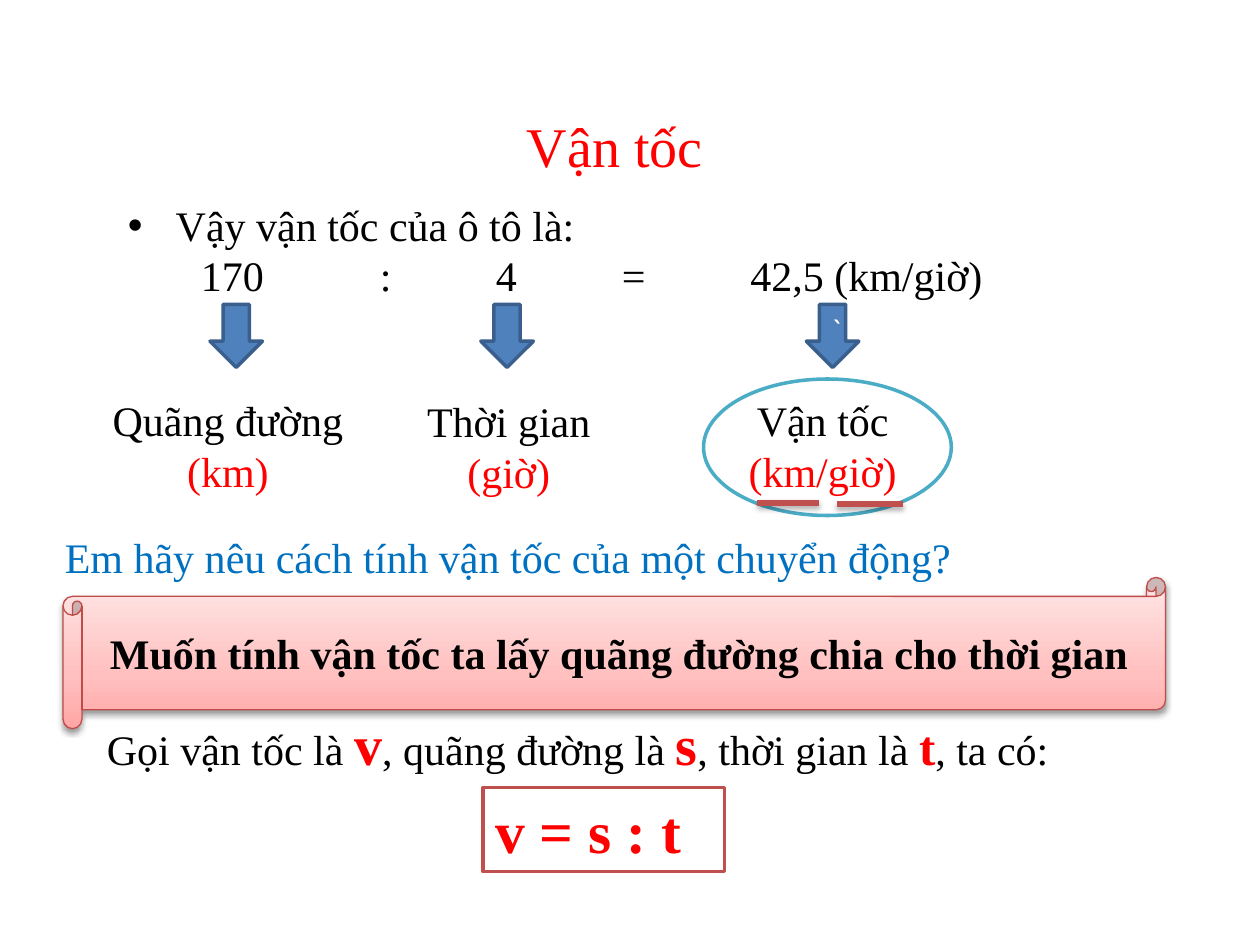
from copy import deepcopy

from pptx import Presentation
from pptx.dml.color import RGBColor
from pptx.enum.shapes import MSO_CONNECTOR, MSO_SHAPE
from pptx.enum.text import MSO_ANCHOR, PP_ALIGN
from pptx.oxml.ns import qn
from pptx.util import Inches, Pt
from lxml import etree

LEFT, CENTER = PP_ALIGN.LEFT, PP_ALIGN.CENTER
TOP, MIDDLE = MSO_ANCHOR.TOP, MSO_ANCHOR.MIDDLE
ARROW, SCROLL = MSO_SHAPE.DOWN_ARROW, MSO_SHAPE.HORIZONTAL_SCROLL
OVAL, RECT = MSO_SHAPE.OVAL, MSO_SHAPE.RECTANGLE
STRAIGHT = MSO_CONNECTOR.STRAIGHT

COLORS = {
    "black": "000000", "white": "FFFFFF", "red": "FF0000", "question": "0070C0",
    "arrow": "4F81BD", "arrow_line": "3A5F8C", "ring": "4BACC6",
    "accent": "C0504D", "scroll_line": "BF4C48",
}
SCROLL_STOPS = [(0, "FFA6A5"), (0.35, "FFC0BF"), (1, "FFE7E7")]
COLS, ROWS = 120, 90


def rgb(name):
    return RGBColor.from_string(COLORS[name])


class Slide:
    """Places elements on a grid of COLS by ROWS cells."""

    font = "Times New Roman"
    size = 24

    def __init__(self, prs):
        self.prs = prs
        self.s = prs.slides.add_slide(prs.slide_layouts[6])

    def grid(self, *values):
        units = (self.prs.slide_width / COLS, self.prs.slide_height / ROWS)
        return [round(v * units[i % 2]) for i, v in enumerate(values)]

    def add_lines(self, tf, lines, align=LEFT, anchor=TOP, wrap=True):
        """Each line is a list of runs: (text, color, size, bold, font)."""
        tf.word_wrap = wrap
        tf.vertical_anchor = anchor
        for i, runs in enumerate(lines):
            p = tf.paragraphs[0] if i == 0 else tf.add_paragraph()
            p.alignment = align
            for text, color, *style in runs:
                size, bold, font = style + [self.size, False, self.font][len(style):]
                r = p.add_run()
                r.text = text
                r.font.name, r.font.size, r.font.bold = font, Pt(size), bold
                r.font.color.rgb = rgb(color)

    def text(self, place, lines, **layout):
        tf = self.s.shapes.add_textbox(*self.grid(*place)).text_frame
        self.add_lines(tf, lines, **layout)
        return tf

    def shape(self, kind, place, line, width=2, fill=None, lines=(), **layout):
        sp = self.s.shapes.add_shape(kind, *self.grid(*place))
        sp.shadow.inherit = False
        if fill:
            sp.fill.solid()
            sp.fill.fore_color.rgb = rgb(fill)
        else:
            sp.fill.background()
        sp.line.color.rgb = rgb(line)
        sp.line.width = Pt(width)
        self.add_lines(sp.text_frame, lines, **layout)
        return sp

    def underline(self, x1, x2, y):
        c = self.s.shapes.add_connector(STRAIGHT, *self.grid(x1, y, x2, y))
        c.line.color.rgb = rgb("accent")
        c.line.width = Pt(3)
        etree.SubElement(c._element.spPr, qn("a:effectLst"))
        self.shadow(c, 35, 1.8)

    def shadow(self, sp, alpha, dist):
        effects = sp._element.spPr.find(qn("a:effectLst"))
        outer = etree.SubElement(effects, qn("a:outerShdw"), blurRad=str(Pt(3.1)),
                                 dist=str(Pt(dist)), dir="5400000", rotWithShape="0")
        color = etree.SubElement(outer, qn("a:srgbClr"), val=COLORS["black"])
        etree.SubElement(color, qn("a:alpha"), val=str(alpha * 1000))

    def gradient(self, sp, stops):
        sp.fill.gradient()
        sp.fill.gradient_angle = 90
        stop_list = sp._element.spPr.find(".//" + qn("a:gsLst"))
        stop_list.append(deepcopy(stop_list[0]))
        for stop, (position, color) in zip(sp.fill.gradient_stops, stops):
            stop.position = position
            stop.color.rgb = RGBColor.from_string(color)

    def bullet(self, p, indent):
        pPr = p._p.get_or_add_pPr()
        pPr.set("marL", str(Inches(indent)))
        pPr.set("indent", str(-Inches(indent)))
        etree.SubElement(pPr, qn("a:buFont"), typeface="Arial")
        etree.SubElement(pPr, qn("a:buChar"), char="•")

    def tabs(self, p, stops):
        tab_list = etree.SubElement(p._p.get_or_add_pPr(), qn("a:tabLst"))
        for stop in stops:
            etree.SubElement(tab_list, qn("a:tab"), pos=str(Inches(stop)), algn="l")


def main():
    prs = Presentation()
    prs.slide_width, prs.slide_height = Inches(10), Inches(7.5)
    slide = Slide(prs)

    # Title and worked example
    slide.text((49, 10, 19.3, 7.7), [[("Vận tốc", "red", 32)]], wrap=False)
    tf = slide.text((11, 18.4, 84.7, 10.9), [
        [("Vậy vận tốc của ô tô là:", "black")],
        [("\t170\t:\t4\t=\t42,5 (km/giờ)", "black")],
    ])
    slide.bullet(tf.paragraphs[0], 0.38)
    slide.tabs(tf.paragraphs[1], [0.58, 2, 2.92, 3.92, 4.94])

    # Quantities, each with an arrow above
    for name, unit, x, y, w, arrow_x, mark in [
        ("Quãng đường", "(km)", 9.4, 37, 24.6, 20, ""),
        ("Thời gian", "(giờ)", 39.4, 37.1, 18.1, 45.8, ""),
        ("Vận tốc", "(km/giờ)", 70, 37, 16.7, 76.8, "`"),
    ]:
        slide.text((x, y, w, 10.9), [[(name, "black")], [(unit, "red")]],
                   align=CENTER, wrap=False)
        lines = [[(mark, "white", 18, False, "Calibri")]] if mark else []
        slide.shape(ARROW, (arrow_x, 29, 5, 6), "arrow_line", fill="arrow",
                    lines=lines, align=CENTER, anchor=MIDDLE)

    # Rule on a scroll, with its question
    rule = "Muốn tính vận tốc ta lấy quãng đường chia cho thời gian"
    scroll = slide.shape(SCROLL, (6, 55, 105, 14.4), "scroll_line", 0.75,
                         lines=[[(rule, "black", 24, True)]],
                         align=CENTER, anchor=MIDDLE)
    slide.gradient(scroll, SCROLL_STOPS)
    slide.shadow(scroll, 38, 1.6)
    slide.text((5, 50, 96, 6),
               [[("Em hãy nêu cách tính vận tốc của một chuyển động?", "question")]])

    # Ring around the speed
    slide.shape(OVAL, (67, 36.1, 23.6, 13), "ring")

    # Symbols and formula
    slide.text((9, 67, 96, 7.7), [[
        ("Gọi vận tốc là ", "black"), ("v", "red", 32, True),
        (", quãng đường là ", "black"), ("s", "red", 32, True),
        (", thời gian là ", "black"), ("t", "red", 28, True),
        (", ta có:", "black"),
    ]])
    slide.shape(RECT, (46, 75, 23, 8), "accent", fill="white",
                lines=[[("v = s : t", "red", 34, True)]])

    # Underlined units
    slide.underline(72.1, 78, 47.9)
    slide.underline(79.7, 86, 48)

    prs.save("out.pptx")


if __name__ == "__main__":
    main()
